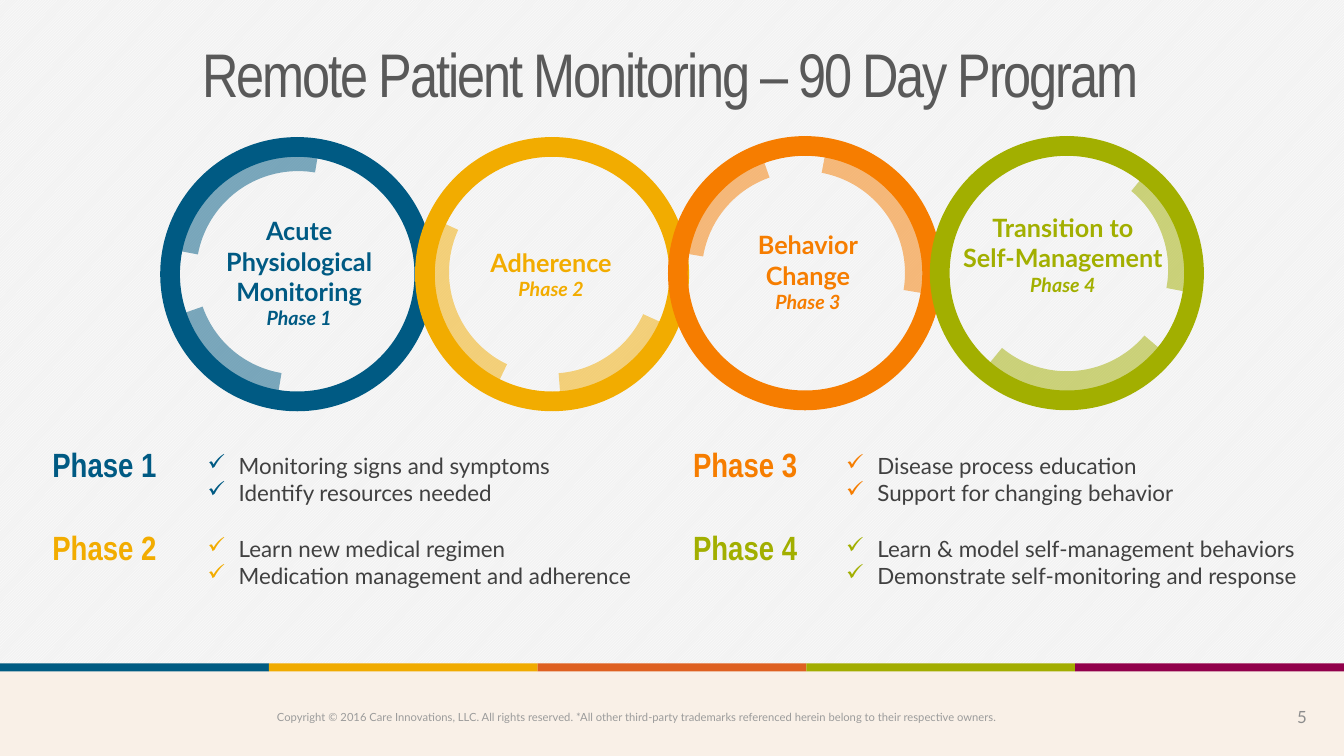
from lxml import etree
from pptx import Presentation
from pptx.dml.color import RGBColor
from pptx.enum.dml import MSO_PATTERN
from pptx.enum.shapes import MSO_SHAPE as SHAPE
from pptx.enum.text import MSO_ANCHOR as ANCHOR, MSO_AUTO_SIZE, PP_ALIGN as ALIGN
from pptx.oxml.ns import qn
from pptx.util import Inches, Pt

BLUE = RGBColor(0x00, 0x5A, 0x83)
YELLOW = RGBColor(0xF2, 0xAC, 0x00)
ORANGE = RGBColor(0xF6, 0x7D, 0x00)
GREEN = RGBColor(0xA2, 0xAF, 0x00)
STRIPES = [RGBColor(0x00, 0x5B, 0x82), RGBColor(0xF0, 0xAB, 0x00),
           RGBColor(0xDE, 0x60, 0x21), RGBColor(0xA2, 0xAD, 0x00),
           RGBColor(0x91, 0x00, 0x4B)]
CREAM = RGBColor(0xF9, 0xF0, 0xE7)
WHITE = RGBColor(0xFF, 0xFF, 0xFF)
PALE = RGBColor(0xF2, 0xF2, 0xF2)
TITLE_GRAY = RGBColor(0x59, 0x59, 0x59)
BODY_GRAY = RGBColor(0x40, 0x40, 0x40)
NOTE_GRAY = RGBColor(0x9B, 0x9B, 0x9B)
NUMBER_GRAY = RGBColor(0x8C, 0x8C, 0x8C)
W, H = 13.34, 7.5
NO_STYLE = "{2D5ABB26-0587-4C30-8999-92F81FD0307C}"


def write(p, text, size, color, font="Lato", bold=False, italic=False, align=ALIGN.LEFT):
    p.text = text
    p.alignment = align
    for r in p.runs:
        f = r.font
        f.name, f.size, f.bold, f.italic = font, Pt(size), bold, italic
        f.color.rgb = color


def draw(kind, x, y, w, h, color):
    sp = s.shapes.add_shape(kind, Inches(x), Inches(y), Inches(w), Inches(h))
    sp.shadow.inherit = False
    sp.fill.solid()
    sp.fill.fore_color.rgb = color
    sp.line.fill.background()
    return sp


prs = Presentation()
prs.slide_width, prs.slide_height = Inches(W), Inches(H)
s = prs.slides.add_slide(prs.slide_layouts[5])

# Hatched background
fill = s.background.fill
fill.patterned()
fill.pattern = MSO_PATTERN.DARK_UPWARD_DIAGONAL
fill.fore_color.rgb, fill.back_color.rgb = WHITE, PALE

# Footer band with its colour stripes
draw(SHAPE.RECTANGLE, 0, 6.58, W, H - 6.58, CREAM)
for i, color in enumerate(STRIPES):
    draw(SHAPE.RECTANGLE, i * W / 5, 6.58, W / 5, 0.08, color)

# Title
title = s.shapes.title
title.left, title.top, title.width, title.height = map(Inches, (0.42, 0.31, 12.47, 0.68))
tf = title.text_frame
tf.auto_size = MSO_AUTO_SIZE.NONE
tf.vertical_anchor = ANCHOR.TOP
write(tf.paragraphs[0], "Remote Patient Monitoring – 90 Day Program", 44, TITLE_GRAY,
      font="Arial Narrow", align=ALIGN.CENTER)
tf.paragraphs[0].runs[0].font._element.set("spc", "-150")

# Copyright line and slide number
for text, box, size, color, align in [
        ("Copyright © 2016 Care Innovations, LLC. All rights reserved. *All other third-party "
         "trademarks referenced herein belong to their respective owners.",
         (2.65, 7, 9.18, 0.24), 8, NOTE_GRAY, ALIGN.LEFT),
        ("5", (11.83, 6.9, 1.24, 0.42), 12, NUMBER_GRAY, ALIGN.RIGHT)]:
    tf = s.shapes.add_textbox(*map(Inches, box)).text_frame
    tf.word_wrap = True
    tf.vertical_anchor = ANCHOR.MIDDLE if align == ALIGN.RIGHT else ANCHOR.TOP
    write(tf.paragraphs[0], text, size, color, align=align)

# Rings: name, colour, centre, arc centre, rotation, label centre and top
RING, ARC, LABEL = 2.72, 2.57, 2.5
ARCS = [(114.34, 167.7, 0.106), (59.68, 96.42, 0.109)]
rings = [
    ("Acute\vPhysiological\vMonitoring", BLUE, (2.95, 2.72), (2.96, 2.71), 0, (2.97, 2.09)),
    ("Adherence", YELLOW, (5.48, 2.72), (5.47, 2.7), 285, (5.47, 2.4)),
    ("Behavior\vChange", ORANGE, (7.99, 2.71), (7.97, 2.71), 90, (8.02, 2.23)),
    ("Transition to\vSelf-Management", GREEN, (10.59, 2.71), (10.59, 2.67), 210, (10.55, 2.06)),
]
for n, (name, color, (cx, cy), (ax, ay), turn, (lx, ly)) in enumerate(rings, 1):
    ring = draw(SHAPE.DONUT, cx - RING / 2, cy - RING / 2, RING, RING, color)
    ring.adjustments[0] = 0.072
    ring.rotation = turn
    for adjustments in ARCS:
        arc = draw(SHAPE.BLOCK_ARC, ax - ARC / 2, ay - ARC / 2, ARC, ARC, color)
        arc.rotation = turn
        for i, value in enumerate(adjustments):
            arc.adjustments[i] = value
        rgb = arc.fill._xPr.find(qn("a:solidFill"))[0]
        etree.SubElement(rgb, qn("a:alpha")).set("val", "50000")
    height = 0.34 + 0.3 * (name.count("\v") + 1)
    tf = s.shapes.add_textbox(Inches(lx - LABEL / 2), Inches(ly),
                              Inches(LABEL), Inches(height)).text_frame
    tf.word_wrap = True
    write(tf.paragraphs[0], name, 18, color, bold=True, align=ALIGN.CENTER)
    write(tf.add_paragraph(), f"Phase {n}", 14, color, bold=True, italic=True, align=ALIGN.CENTER)

# Phase table, filled column by column
steps = [
    ("Monitoring signs and symptoms", "Identify resources needed"),
    ("Learn new medical regimen", "Medication management and adherence"),
    ("Disease process education", "Support for changing behavior"),
    ("Learn & model self-management behaviors", "Demonstrate self-monitoring and response"),
]
frame = s.shapes.add_table(2, 4, Inches(0.42), Inches(4.44), Inches(12.71), Inches(1.65))
table = frame.table
table.first_row = table.horz_banding = False
table._tbl.tblPr.find(qn("a:tableStyleId")).text = NO_STYLE
for col, width in zip(table.columns, (1.54, 4.82, 1.52, 4.83)):
    col.width = Inches(width)
for cell in table.iter_cells():
    cell.fill.background()
for i, lines in enumerate(steps):
    row, col, color = i % 2, i // 2 * 2, rings[i][1]
    write(table.cell(row, col).text_frame.paragraphs[0], f"Phase {i + 1}", 24, color,
          font="Arial Narrow", bold=True)
    tf = table.cell(row, col + 1).text_frame
    for p, line in zip((tf.paragraphs[0], tf.add_paragraph()), lines):
        write(p, line, 16, BODY_GRAY)
        pPr = p._p.get_or_add_pPr()
        pPr.set("marL", str(Inches(0.31)))
        pPr.set("indent", str(-Inches(0.31)))
        bullet_color = etree.SubElement(pPr, qn("a:buClr"))
        etree.SubElement(bullet_color, qn("a:srgbClr")).set("val", str(color))
        etree.SubElement(pPr, qn("a:buChar")).set("char", "✓")

prs.save("out.pptx")
